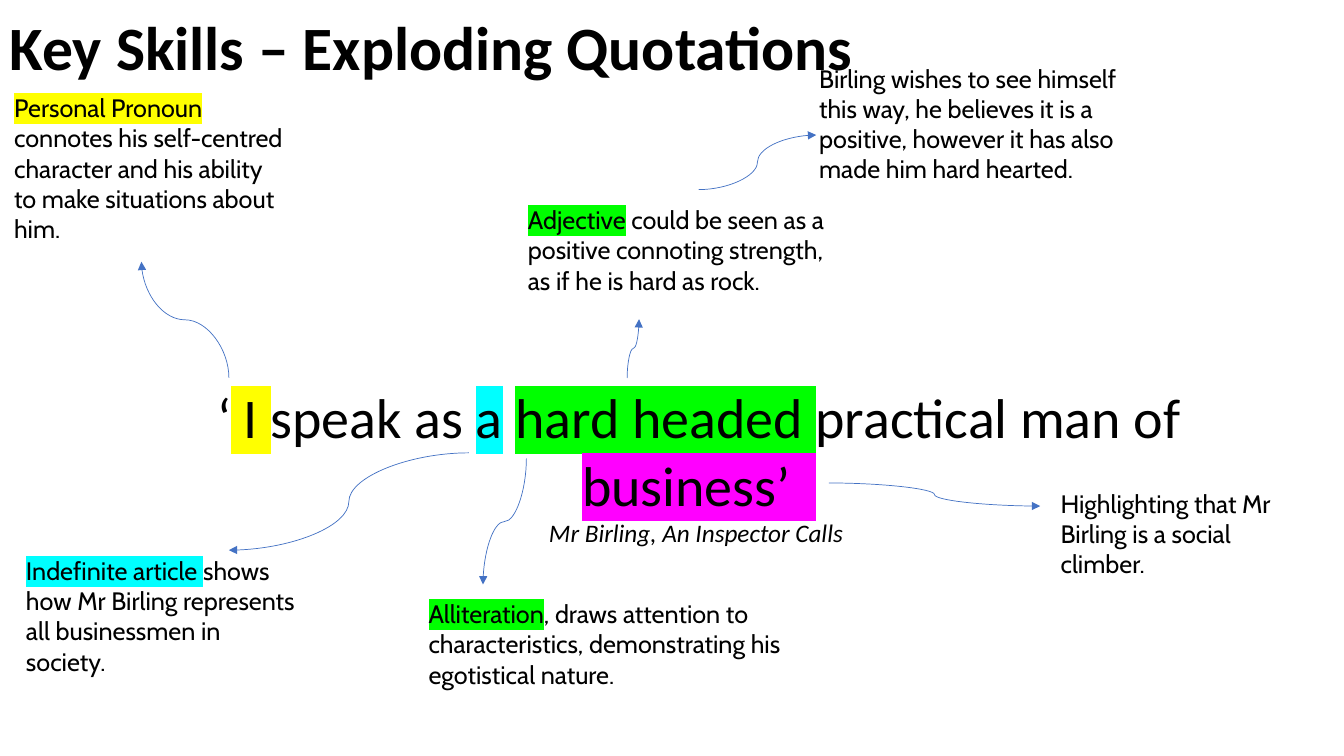
import pptx
import pptx.util
import pptx.dml.color
import pptx.enum.shapes
import pptx.enum.text
import pptx.oxml
import pptx.oxml.ns
import lxml.etree

Pt = pptx.util.Pt
qn = pptx.oxml.ns.qn

BLACK, BLUE = "000000", "4472C4"
YELLOW, CYAN, GREEN, MAGENTA = "FFFF00", "00FFFF", "00FF00", "FF00FF"

TITLE = "Key Skills – Exploding Quotations"
TITLE_BOX = (0, -16.5, 828, 104.5)

QUOTE_BOX = (139, 270, 720.5, 126)
QUOTE = [
    ("‘", None),
    (" I ", YELLOW),
    ("speak as ", None),
    ("a", CYAN),
    (" ", None),
    ("hard headed ", GREEN),
    ("practical man of ", None),
    ("business’  ", MAGENTA),
]
SPEAKER = "Mr Birling, An Inspector Calls "

NOTES = [
    ((3, 62.5, 210, 116.5), [
        ("Personal Pronoun ", YELLOW),
        ("connotes his self-centred character and his ability to make situations about him.", None)]),
    ((370, 142.5, 232.5, 94.5), [
        ("Adjective", GREEN),
        (" could be seen as a positive connoting strength, as if he is hard as rock.", None)]),
    ((578, 41.5, 240, 94.5), [
        ("Birling wishes to see himself this way, he believes it is a positive, "
         "however it has also made him hard hearted.", None)]),
    ((750.5, 345, 183, 72.5), [
        ("Highlighting that Mr Birling is a social climber.", None)]),
    ((299, 424, 314.5, 72.5), [
        ("Alliteration", GREEN),
        (", draws attention to characteristics, demonstrating his egotistical nature.", None)]),
    ((11.5, 393, 210, 94.5), [
        ("Indefinite article ", CYAN),
        ("shows how Mr Birling represents all businessmen in society.", None)]),
]

VERTICAL_ARROWS = [
    ((163.5, 270), (101, 187)),
    ((448, 270), (456.5, 228)),
    ((376, 327.5), (345, 417.5)),
]
HORIZONTAL_ARROWS = [
    ((499, 135.5), (583, 96.5)),
    ((592, 345), (743, 361.5)),
    ((335, 323.5), (163.5, 393)),
]


def color(value):
    return pptx.dml.color.RGBColor.from_string(value)


def add_box(page, place):
    box = page.shapes.add_textbox(*map(Pt, place))
    box.text_frame.word_wrap = True
    return box.text_frame


def add_span(para, text, size, font, highlight=None, bold=None, italic=None):
    span = para.add_run()
    span.text = text
    span.font.size = Pt(size)
    span.font.name = font
    span.font.bold = bold
    span.font.italic = italic
    span.font.color.rgb = color(BLACK)
    if highlight:
        fill = span.font._element.find(qn("a:solidFill"))
        marker = lxml.etree.Element(qn("a:highlight"))
        lxml.etree.SubElement(marker, qn("a:srgbClr"), val=highlight)
        fill.addnext(marker)


def add_arrow(page, start, end, vertical):
    across, down = end[0] - start[0], end[1] - start[1]
    middle_x, middle_y = (start[0] + end[0]) / 2, (start[1] + end[1]) / 2
    turn = 0
    if vertical:
        turn = 90 if down > 0 else 270
        across, down = (down, -across) if down > 0 else (-down, across)
    arrow = page.shapes.add_connector(
        pptx.enum.shapes.MSO_CONNECTOR.CURVE,
        Pt(middle_x - across / 2), Pt(middle_y - down / 2),
        Pt(middle_x + across / 2), Pt(middle_y + down / 2))
    arrow.line.color.rgb = color(BLUE)
    arrow.line.width = Pt(0.5)
    properties = arrow._element.spPr
    if turn:
        properties.find(qn("a:xfrm")).set("rot", str(turn * 60000))
    lxml.etree.SubElement(properties.find(qn("a:ln")), qn("a:tailEnd"), type="triangle")
    lxml.etree.SubElement(properties, qn("a:effectLst"))


def main():
    deck = pptx.Presentation()
    deck.slide_width, deck.slide_height = Pt(960), Pt(540)
    page = deck.slides.add_slide(deck.slide_layouts[6])

    title = add_box(page, TITLE_BOX)
    title.vertical_anchor = pptx.enum.text.MSO_ANCHOR.MIDDLE
    title.paragraphs[0].line_spacing = 0.9
    add_span(title.paragraphs[0], TITLE, 44, "Calibri", bold=True)

    quote = add_box(page, QUOTE_BOX)
    for text, highlight in QUOTE:
        add_span(quote.paragraphs[0], text, 40, "Calibri", highlight)
    add_span(quote.add_paragraph(), SPEAKER, 18, "Calibri", italic=True)
    for para in quote.paragraphs:
        para.alignment = pptx.enum.text.PP_ALIGN.CENTER

    for place, spans in NOTES:
        note = add_box(page, place)
        for text, highlight in spans:
            add_span(note.paragraphs[0], text, 18, "Cabin", highlight)

    for arrows, vertical in ((VERTICAL_ARROWS, True), (HORIZONTAL_ARROWS, False)):
        for start, end in arrows:
            add_arrow(page, start, end, vertical)

    deck.save("out.pptx")


if __name__ == "__main__":
    main()
